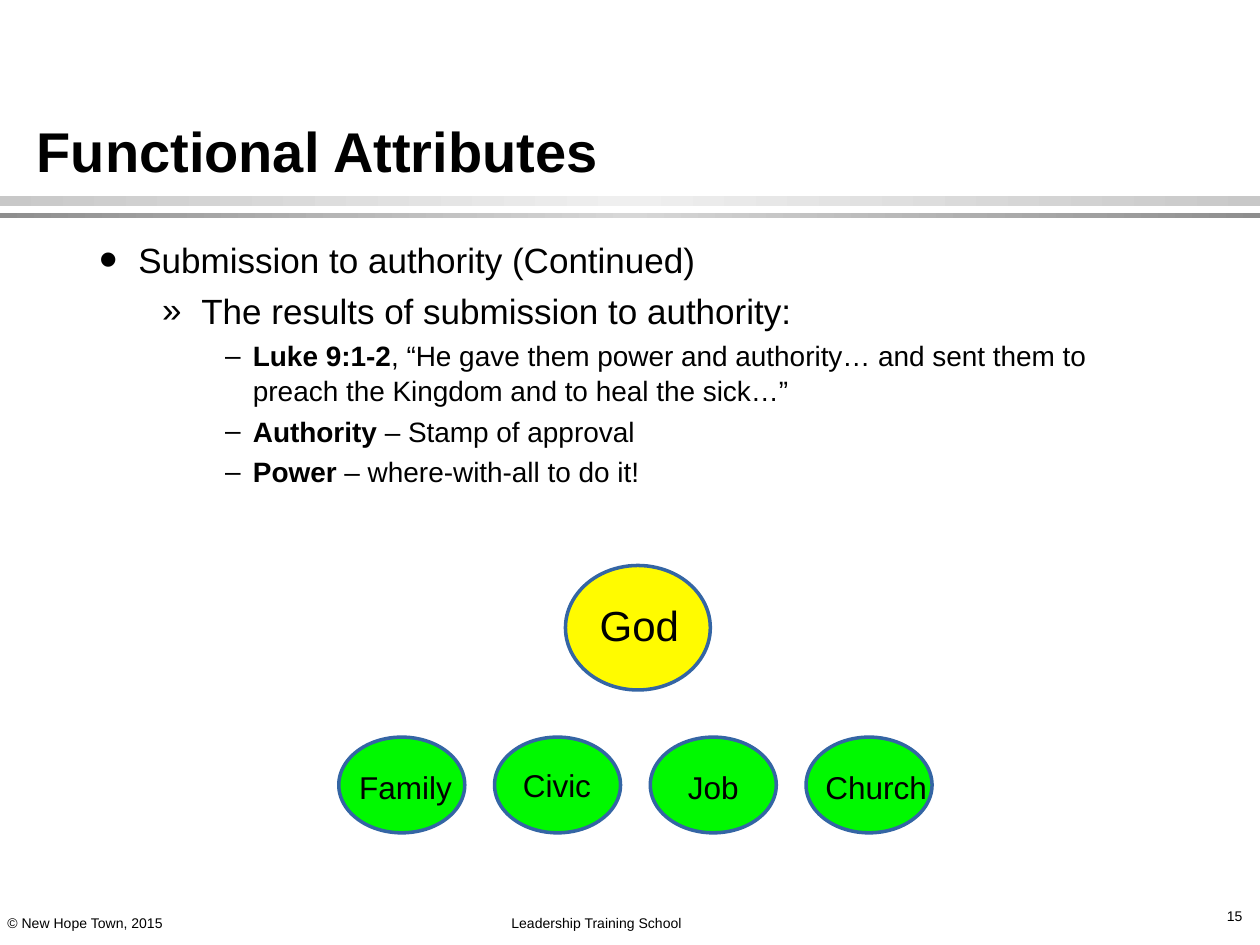
import copy
import pptx
import pptx.util
import pptx.dml.color
import pptx.enum.shapes
import pptx.enum.text
import pptx.oxml.ns
from lxml import etree

Cm = pptx.util.Cm
Pt = pptx.util.Pt
RGB = pptx.dml.color.RGBColor.from_string
qn = pptx.oxml.ns.qn
SHAPE = pptx.enum.shapes.MSO_SHAPE
ALIGN = pptx.enum.text.PP_ALIGN
ANCHOR = pptx.enum.text.MSO_ANCHOR

THEME = dict(
    font="Arial", text="000000", outline="3465A4", god="FFFB00", area="00F900",
    title=32, body=20, detail=16, god_size=24, area_size=18, footer=8,
)


def write(p, text, size, bold=False, align=ALIGN.LEFT):
    """Add one run in the theme font to paragraph p."""
    p.alignment = align
    r = p.add_run()
    r.text = text
    r.font.name = THEME["font"]
    r.font.size = Pt(size)
    r.font.bold = bold
    r.font.color.rgb = RGB(THEME["text"])


def frame(sp, anchor=ANCHOR.TOP, wrap=True):
    """Give a shape's text frame the slide's common margins."""
    tf = sp.text_frame
    tf.margin_left = tf.margin_right = tf.margin_top = tf.margin_bottom = Cm(0.1)
    tf.auto_size = pptx.enum.text.MSO_AUTO_SIZE.NONE
    tf.vertical_anchor = anchor
    tf.word_wrap = wrap
    return tf


prs = pptx.Presentation()
prs.slide_width = Cm(25.4)
prs.slide_height = Cm(19.05)
s = prs.slides.add_slide(prs.slide_layouts[5])

# Title
sp = s.shapes.title
sp.left, sp.top, sp.width, sp.height = Cm(0.64), Cm(0), Cm(18.52), Cm(3.81)
write(frame(sp, ANCHOR.BOTTOM).paragraphs[0], "Functional Attributes", THEME["title"], bold=True)

# Double rule under the title, lighter in the middle
for top, height, edge, middle in [(3.96, 0.2, "C8C8C8", "EFEFEF"),
                                  (4.29, 0.1, "8E8E8E", "D7D7D7")]:
    sp = s.shapes.add_shape(SHAPE.RECTANGLE, Cm(0), Cm(top), prs.slide_width, Cm(height))
    sp.shadow.inherit = False
    sp.line.fill.background()
    sp.fill.gradient()
    sp.fill.gradient_angle = 0
    for stop in sp.fill.gradient_stops:
        stop.color.rgb = RGB(edge)
    stops = sp.element.spPr.find(".//" + qn("a:gsLst"))
    stops.insert(1, copy.deepcopy(stops[0]))
    sp.fill.gradient_stops[1].color.rgb = RGB(middle)
    stops[1].set("pos", "50000")

# Footer and slide number
sp = s.shapes.add_textbox(Cm(0.05), Cm(18.34), Cm(17.35), Cm(0.53))
p = frame(sp, ANCHOR.MIDDLE).paragraphs[0]
tabs = etree.SubElement(p._p.get_or_add_pPr(), qn("a:tabLst"))
etree.SubElement(tabs, qn("a:tab"), pos=str(Cm(10.16)), algn="l")
write(p, "© New Hope Town, 2015\tLeadership Training School", THEME["footer"])

sp = s.shapes.add_textbox(Cm(24.59), Cm(18.19), Cm(0.56), Cm(0.53))
write(frame(sp, ANCHOR.MIDDLE, wrap=False).paragraphs[0], "15", THEME["footer"], align=ALIGN.RIGHT)

# Bulleted outline: bullet, bullet size %, text indent, hanging, space before, size
LEVELS = [
    ("•", 150, 0.79, 0.79, 0, THEME["body"]),
    ("»", 100, 2.06, 0.79, 4, THEME["body"]),
    ("–", 100, 3.1, 0.56, 3, THEME["detail"]),
]
OUTLINE = [
    (0, "", "Submission to authority (Continued)"),
    (1, "", "The results of submission to authority:"),
    (2, "Luke 9:1-2", ", “He gave them power and authority… and sent them to preach "
                      "the Kingdom and to heal the sick…”"),
    (2, "Authority", " – Stamp of approval"),
    (2, "Power", " – where-with-all to do it!"),
]
tf = frame(s.shapes.add_textbox(Cm(1.9), Cm(4.67), Cm(21.59), Cm(6.45)))
for i, (level, lead, text) in enumerate(OUTLINE):
    bullet, percent, indent, hanging, before, size = LEVELS[level]
    p = tf.add_paragraph() if i else tf.paragraphs[0]
    p.level = level
    pPr = p._p.get_or_add_pPr()
    pPr.set("marL", str(Cm(indent)))
    pPr.set("indent", str(-Cm(hanging)))
    etree.SubElement(pPr, qn("a:buSzPct"), val=str(percent * 1000))
    etree.SubElement(pPr, qn("a:buFont"), typeface=THEME["font"])
    etree.SubElement(pPr, qn("a:buChar"), char=bullet)
    p.line_spacing = 1.05
    p.space_before = Pt(before)
    if lead:
        write(p, lead, size, bold=True)
    write(p, text, size)

# God above four areas of authority: oval box, fill, label, label box, size
CIRCLES = [((11.4, 11.4, 2.92, 2.51), "god", "God", (11.99, 11.99, 1.85, 1.17), "god_size")]
LABELS = [("Family", 7.14, 15.39, 2.11), ("Civic", 10.44, 15.34, 1.63),
          ("Job", 13.77, 15.39, 1.27), ("Church", 16.54, 15.39, 2.29)]
for i, (label, left, top, width) in enumerate(LABELS):
    CIRCLES.append(((6.83 + 3.14 * i, 14.86, 2.54, 1.93), "area", label,
                    (left, top, width, 0.94), "area_size"))

for oval, fill, label, box, size in CIRCLES:
    sp = s.shapes.add_shape(SHAPE.OVAL, *[Cm(v) for v in oval])
    sp.shadow.inherit = False
    sp.fill.solid()
    sp.fill.fore_color.rgb = RGB(THEME[fill])
    sp.line.color.rgb = RGB(THEME["outline"])
    sp.line.width = Pt(2)
    sp = s.shapes.add_textbox(*[Cm(v) for v in box])
    write(frame(sp, wrap=False).paragraphs[0], label, THEME[size])

prs.save("out.pptx")
